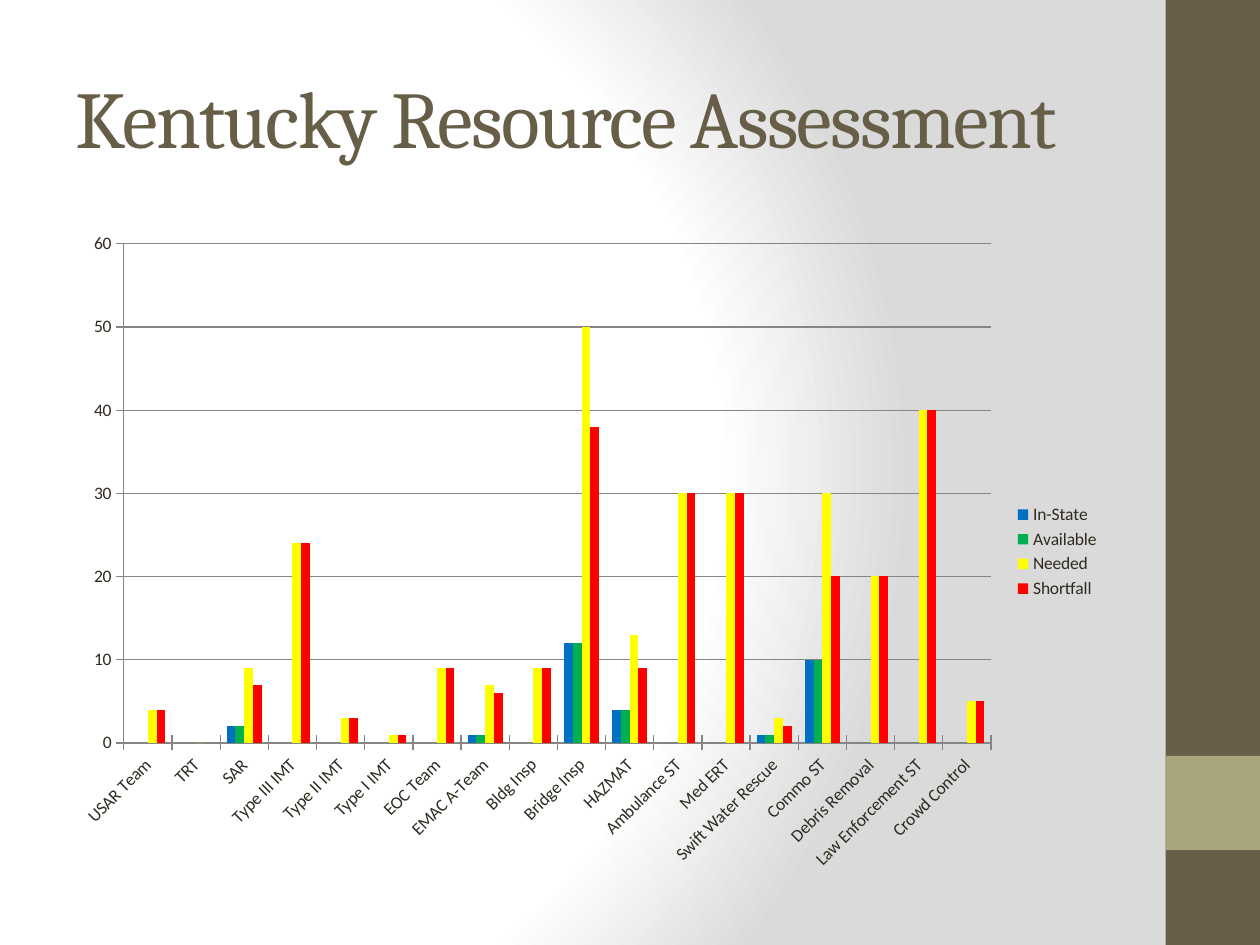
from lxml import etree
from pptx import Presentation
from pptx import util as u
from pptx.chart import data as chart_data
from pptx.dml.color import RGBColor
from pptx.enum import chart as charts, shapes, text

A = "http://schemas.openxmlformats.org/drawingml/2006/main"
P = "http://schemas.openxmlformats.org/presentationml/2006/main"

BROWN, KHAKI, INK, GRID = "675E47", "A9A57C", "2F2B20", "868686"

# In-State, Available, Needed, Shortfall for each resource
SERIES = {"In-State": "0070C0", "Available": "00B050",
          "Needed": "FFFF00", "Shortfall": "FF0000"}
RESOURCES = {
    "USAR Team": (0, 0, 4, 4),
    "TRT": (0, 0, 0, 0),
    "SAR": (2, 2, 9, 7),
    "Type III IMT": (0, 0, 24, 24),
    "Type II IMT": (0, 0, 3, 3),
    "Type I IMT": (0, 0, 1, 1),
    "EOC Team": (0, 0, 9, 9),
    "EMAC A-Team": (1, 1, 7, 6),
    "Bldg Insp": (0, 0, 9, 9),
    "Bridge Insp": (12, 12, 50, 38),
    "HAZMAT": (4, 4, 13, 9),
    "Ambulance ST": (0, 0, 30, 30),
    "Med ERT": (0, 0, 30, 30),
    "Swift Water Rescue": (1, 1, 3, 2),
    "Commo ST": (10, 10, 30, 20),
    "Debris Removal": (0, 0, 20, 20),
    "Law Enforcement ST": (0, 0, 40, 40),
    "Crowd Control": (0, 0, 5, 5),
}


def color(hex_string):
    return RGBColor.from_string(hex_string)


class SlideBuilder:
    title_font, body_font = "Cambria", "Calibri"

    def __init__(self, slide):
        self.slide = slide

    def background(self, stops, focus):
        """Radial gradient; focus holds the left, top, right, bottom insets."""
        stop_xml = "".join(
            f'<a:gs pos="{position * 1000}"><a:srgbClr val="{value}"/></a:gs>'
            for position, value in stops)
        insets = " ".join(f'{side}="{value * 1000}"'
                          for side, value in zip("ltrb", focus))
        self.slide.element.cSld.insert(0, etree.fromstring(
            f'<p:bg xmlns:p="{P}" xmlns:a="{A}"><p:bgPr>'
            f'<a:gradFill rotWithShape="1"><a:gsLst>{stop_xml}</a:gsLst>'
            f'<a:path path="circle"><a:fillToRect {insets}/></a:path>'
            '</a:gradFill><a:effectLst/></p:bgPr></p:bg>'))

    def rectangle(self, left, top, width, height, fill):
        shape = self.slide.shapes.add_shape(
            shapes.MSO_SHAPE.RECTANGLE,
            u.Cm(left), u.Cm(top), u.Cm(width), u.Cm(height))
        shape.shadow.inherit = False
        shape.fill.solid()
        shape.fill.fore_color.rgb = color(fill)
        shape.line.fill.background()

    def title(self, left, top, width, height, wording):
        box = self.slide.shapes.add_textbox(
            u.Cm(left), u.Cm(top), u.Cm(width), u.Cm(height))
        frame = box.text_frame
        frame.word_wrap = True
        frame.vertical_anchor = text.MSO_ANCHOR.MIDDLE
        run = frame.paragraphs[0].add_run()
        run.text = wording
        run.font.name = self.title_font
        run.font.size = u.Pt(46)
        run.font.color.rgb = color(BROWN)
        run.font._element.set("spc", "-100")

    def column_chart(self, left, top, width, height, resources, series_colors):
        data = chart_data.CategoryChartData()
        data.categories = list(resources)
        for name, values in zip(series_colors, zip(*resources.values())):
            data.add_series(name, values)
        chart = self.slide.shapes.add_chart(
            charts.XL_CHART_TYPE.COLUMN_CLUSTERED,
            u.Cm(left), u.Cm(top), u.Cm(width), u.Cm(height), data).chart
        chart.has_title = False
        chart.font.name = self.body_font
        chart.font.size = u.Pt(10)
        chart.font.color.rgb = color(INK)

        # Columns
        plot = chart.plots[0]
        plot.gap_width, plot.overlap = 150, 0
        plot.vary_by_categories = False
        for series, fill in zip(plot.series, series_colors.values()):
            series.format.fill.solid()
            series.format.fill.fore_color.rgb = color(fill)

        # Axes and gridlines
        value_axis, category_axis = chart.value_axis, chart.category_axis
        value_axis.minimum_scale, value_axis.maximum_scale = 0, 60
        value_axis.major_unit = 10
        value_axis.has_major_gridlines = True
        for axis in (value_axis, category_axis):
            axis.major_tick_mark = charts.XL_TICK_MARK.CROSS
            axis.tick_labels.font.size = u.Pt(10)
        for part in (value_axis, category_axis, value_axis.major_gridlines):
            part.format.line.color.rgb = color(GRID)
            part.format.line.width = u.Pt(0.75)
        for body in chart.element.xpath(".//c:catAx/c:txPr/a:bodyPr"):
            body.set("rot", "-2700000")
            body.set("vert", "horz")

        # Legend
        chart.has_legend = True
        chart.legend.position = charts.XL_LEGEND_POSITION.RIGHT
        chart.legend.include_in_layout = False


def main():
    presentation = Presentation()
    presentation.slide_width, presentation.slide_height = u.Cm(25.4), u.Cm(19.05)
    builder = SlideBuilder(
        presentation.slides.add_slide(presentation.slide_layouts[6]))

    # Background and side band
    builder.background([(0, "FFFFFF"), (75, "FFFFFF"), (100, "DADADA")],
                       (20, 50, 100, 50))
    builder.rectangle(23.5, 0, 1.9, 19.05, BROWN)
    builder.rectangle(23.5, 15.24, 1.9, 1.9, KHAKI)

    # Title and chart
    builder.title(1.27, 0.76, 21.16, 3.18, "Kentucky Resource Assessment")
    builder.column_chart(1.27, 4.45, 21.16, 13.34, RESOURCES, SERIES)

    presentation.save("out.pptx")


if __name__ == "__main__":
    main()
